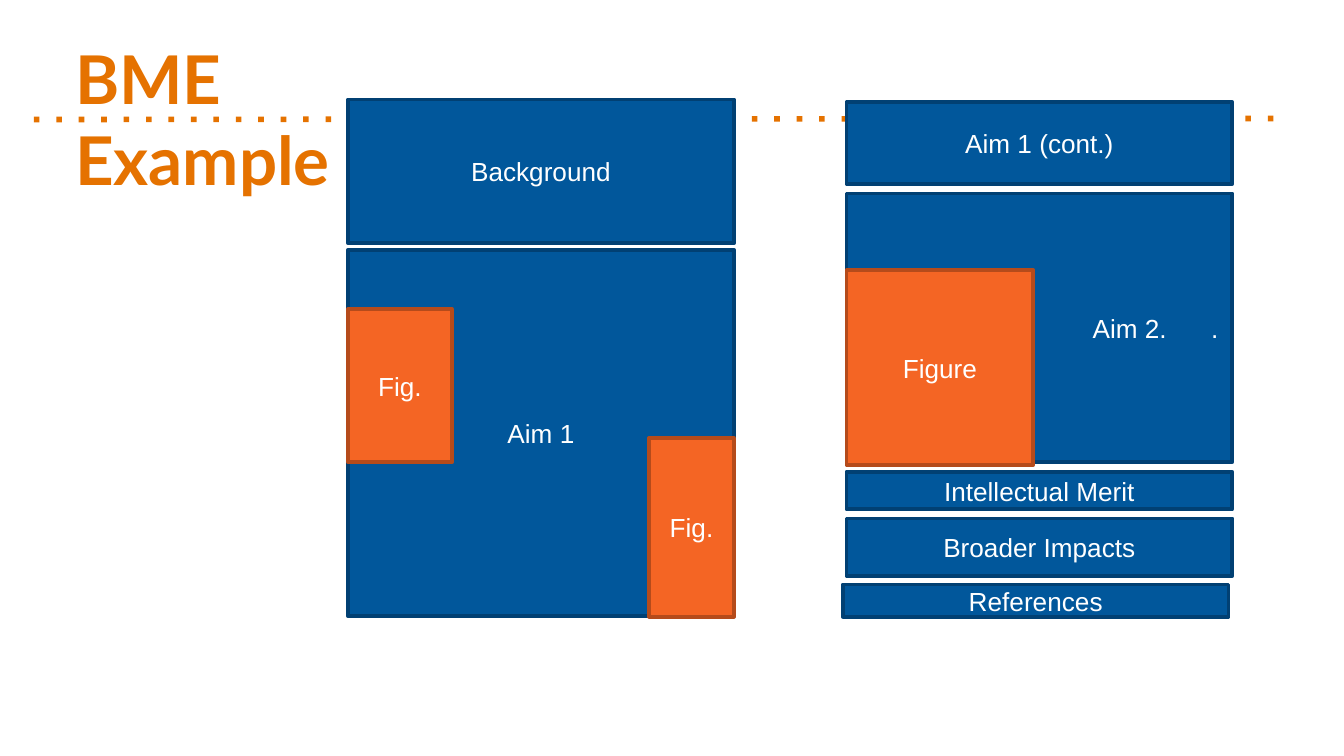
from dataclasses import dataclass

from lxml import etree
from pptx import Presentation
from pptx.dml.color import RGBColor
from pptx.enum.shapes import MSO_CONNECTOR, MSO_SHAPE
from pptx.enum.text import MSO_ANCHOR, PP_ALIGN
from pptx.oxml.ns import qn
from pptx.util import Cm, Pt

STRAIGHT = MSO_CONNECTOR.STRAIGHT
RECTANGLE = MSO_SHAPE.RECTANGLE
MIDDLE = MSO_ANCHOR.MIDDLE
CENTER, LEFT = PP_ALIGN.CENTER, PP_ALIGN.LEFT


@dataclass(frozen=True)
class Theme:
    accent: RGBColor = RGBColor(0xE5, 0x72, 0x00)
    section: RGBColor = RGBColor(0x01, 0x57, 0x9B)
    section_edge: RGBColor = RGBColor(0x01, 0x40, 0x73)
    figure: RGBColor = RGBColor(0xF4, 0x65, 0x24)
    figure_edge: RGBColor = RGBColor(0xB5, 0x4B, 0x1B)
    label: RGBColor = RGBColor(0xFF, 0xFF, 0xFF)
    title_font: str = "Lato"
    label_font: str = "Arial"
    title_size: Pt = Pt(36)
    label_size: Pt = Pt(14)
    edge_width: Pt = Pt(2)
    rule_width: Pt = Pt(3)


theme = Theme()
deck = Presentation()
deck.slide_width, deck.slide_height = Cm(25.4), Cm(14.29)
page = deck.slides.add_slide(deck.slide_layouts[6])


def style_text(paragraph, font, size, color, bold=False):
    for span in paragraph.runs:
        span.font.name = font
        span.font.size = size
        span.font.color.rgb = color
        span.font.bold = bold


def add_block(text, left, top, width, height, fill, edge):
    """Add a labelled rectangle, measured in centimetres."""
    block = page.shapes.add_shape(RECTANGLE, Cm(left), Cm(top), Cm(width), Cm(height))
    block.shadow.inherit = False
    block.fill.solid()
    block.fill.fore_color.rgb = fill
    block.line.color.rgb = edge
    block.line.width = theme.edge_width
    frame = block.text_frame
    frame.text = text
    frame.vertical_anchor = MIDDLE
    frame.paragraphs[0].alignment = CENTER
    style_text(frame.paragraphs[0], theme.label_font, theme.label_size, theme.label)
    return block


# Dotted rule behind the title
rule = page.shapes.add_connector(STRAIGHT, Cm(0.64), Cm(2.26), Cm(24.26), Cm(2.24))
rule.line.color.rgb = theme.accent
rule.line.width = theme.rule_width
etree.SubElement(rule.line._ln, qn("a:prstDash"), val="dot")
etree.SubElement(rule._element.spPr, qn("a:effectLst"))

# Title
title = page.shapes.add_textbox(Cm(1.17), Cm(0.46), Cm(23.09), Cm(1.75))
title_frame = title.text_frame
title_frame.word_wrap = True
title_frame.margin_top = title_frame.margin_bottom = Cm(0.25)
title_frame.paragraphs[0].text = "BME \vExample"
style_text(title_frame.paragraphs[0], theme.title_font, theme.title_size, theme.accent, bold=True)

# Sections of the two proposal pages: label, left, top, height
column_width = 7.29
first_page, second_page = 6.58, 16.0
sections = [
    ("Background", first_page, 1.88, 2.72),
    ("Aim 1", first_page, 4.72, 6.93),
    ("Aim 1 (cont.)", second_page, 1.93, 1.55),
    ("Aim 2.\t.", second_page, 3.66, 5.08),
    ("Intellectual Merit", second_page, 8.92, 0.71),
    ("Broader Impacts", second_page, 9.8, 1.09),
    ("References", second_page - 0.07, 11.05, 0.61),
]
blocks = {
    text: add_block(text, left, top, column_width, height, theme.section, theme.section_edge)
    for text, left, top, height in sections
}

# Aim 2 keeps its label clear of the figure, with a tab stop before the last dot
aim_frame = blocks["Aim 2.\t."].text_frame
aim_frame.margin_left = Cm(4.65)
aim_frame.margin_right = 0
aim_paragraph = aim_frame.paragraphs[0]
aim_paragraph.alignment = LEFT
tab_stops = etree.SubElement(aim_paragraph._p.get_or_add_pPr(), qn("a:tabLst"))
etree.SubElement(tab_stops, qn("a:tab"), pos=str(Cm(2.24)), algn="l")

# Figures set into the aims: label, left, top, width, height
narrow_width = 1.6
figures = [
    ("Fig.", first_page, 5.84, 1.96, 2.9),
    ("Fig.", first_page + column_width - narrow_width, 8.28, narrow_width, 3.38),
    ("Figure", second_page, 5.11, 3.53, 3.68),
]
for figure in figures:
    add_block(*figure, theme.figure, theme.figure_edge)

deck.save("out.pptx")
